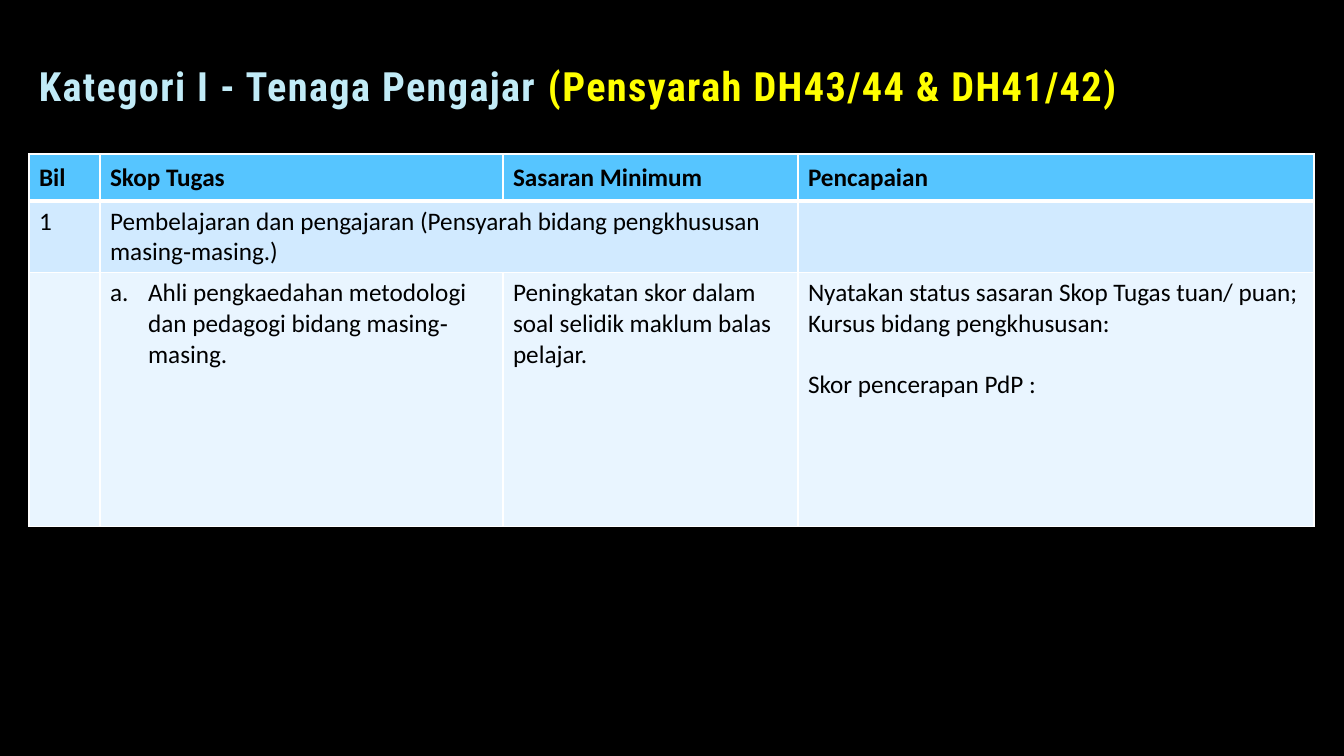
import pptx
import pptx.util
import pptx.dml.color
import pptx.enum.text
import pptx.oxml
import pptx.oxml.ns

EMU_PER_PX = 914400 / 100.8
SLIDE_SIZE = (1344, 756)
TITLE_BOX = (29, 47, 1146, 68)
TITLE = [("Kategori I - Tenaga Pengajar ", "C1EBF7"), ("(Pensyarah DH43/44 & DH41/42)", "FFFF00")]
TABLE_ORIGIN = (29, 154)
COLUMN_WIDTHS = [71, 403, 295, 516]
ROW_HEIGHTS = [47, 71, 254]
ROW_FILLS = ["56C5FF", "D1EAFF", "E9F5FF"]
LIST_INDENT = 38
CELLS = [
    [["Bil"], ["Skop Tugas"], ["Sasaran Minimum"], ["Pencapaian"]],
    [["1"], ["Pembelajaran dan pengajaran (Pensyarah bidang pengkhususan masing‐masing.)"], [], []],
    [
        [],
        ["Ahli pengkaedahan metodologi dan pedagogi bidang masing‐masing."],
        ["Peningkatan skor dalam soal selidik maklum balas pelajar."],
        ["Nyatakan status sasaran Skop Tugas tuan/ puan;", "Kursus bidang pengkhususan:", "Skor pencerapan PdP :"],
    ],
]
LETTERED_CELL = (2, 1)
SPACED_PARAGRAPH = (2, 3, 2)


def px(length):
    return pptx.util.Emu(round(length * EMU_PER_PX))


def color(value):
    return pptx.dml.color.RGBColor.from_string(value)


def line_element(tag, value, points, alpha=100):
    return pptx.oxml.parse_xml(
        f'<a:{tag} {pptx.oxml.ns.nsdecls("a")} w="{round(points * 12700)}"><a:solidFill><a:srgbClr val="{value}">'
        f'<a:alpha val="{alpha * 1000}"/></a:srgbClr></a:solidFill><a:prstDash val="solid"/></a:{tag}>'
    )


def add_span(para, text, font_name, size, value, bold):
    span = para.add_run()
    span.text = text
    span.font.name = font_name
    span.font.size = pptx.util.Pt(size)
    span.font.bold = bold
    span.font.color.rgb = color(value)
    return span


def add_title(page):
    box = page.shapes.add_textbox(*map(px, TITLE_BOX))
    frame = box.text_frame
    frame.word_wrap = True
    frame.vertical_anchor = pptx.enum.text.MSO_ANCHOR.BOTTOM
    para = frame.paragraphs[0]
    para.line_spacing = 0.9
    for text, value in TITLE:
        span = add_span(para, text, "Roboto Condensed", 28.8, value, True)
        properties = span.font._element
        properties.set("spc", "100")
        properties.insert(0, line_element("ln", "404040", 0.75, 10))


def add_letter(para):
    properties = para._p.get_or_add_pPr()
    properties.set("marL", str(px(LIST_INDENT)))
    properties.set("indent", str(-px(LIST_INDENT)))
    properties.append(pptx.oxml.parse_xml(f'<a:buAutoNum {pptx.oxml.ns.nsdecls("a")} type="alphaLcPeriod"/>'))


def style_cell(cell, row):
    cell.fill.solid()
    cell.fill.fore_color.rgb = color(ROW_FILLS[row])
    if row == 0:
        cell.vertical_anchor = pptx.enum.text.MSO_ANCHOR.MIDDLE
    widths = {"lnL": 1, "lnR": 1, "lnT": 3 if row == 1 else 1, "lnB": 3 if row == 0 else 1}
    properties = cell._tc.get_or_add_tcPr()
    for index, (side, points) in enumerate(widths.items()):
        properties.insert(index, line_element(side, "FFFFFF", points))


def fill_cell(cell, row, column, texts):
    frame = cell.text_frame
    frame.paragraphs[0].font.size = pptx.util.Pt(18)
    for index, text in enumerate(texts):
        para = frame.paragraphs[0] if index == 0 else frame.add_paragraph()
        if (row, column) == LETTERED_CELL:
            add_letter(para)
        if (row, column, index) == SPACED_PARAGRAPH:
            para.space_before = pptx.util.Pt(22)
        add_span(para, text, "Calibri", 18, "000000", row == 0)


def add_duties_table(page):
    size = (sum(COLUMN_WIDTHS), sum(ROW_HEIGHTS))
    frame = page.shapes.add_table(len(ROW_HEIGHTS), len(COLUMN_WIDTHS), *map(px, TABLE_ORIGIN + size))
    table = frame.table
    table.horz_banding = False
    for column, width in zip(table.columns, COLUMN_WIDTHS):
        column.width = px(width)
    for row, height in zip(table.rows, ROW_HEIGHTS):
        row.height = px(height)
    for row, contents in enumerate(CELLS):
        for column, texts in enumerate(contents):
            cell = table.cell(row, column)
            style_cell(cell, row)
            fill_cell(cell, row, column, texts)
    table.cell(1, 1).merge(table.cell(1, 2))


def main():
    deck = pptx.Presentation()
    deck.slide_width, deck.slide_height = map(px, SLIDE_SIZE)
    page = deck.slides.add_slide(deck.slide_layouts[6])
    page.background.fill.solid()
    page.background.fill.fore_color.rgb = color("000000")
    add_duties_table(page)
    add_title(page)
    deck.save("out.pptx")


if __name__ == "__main__":
    main()
